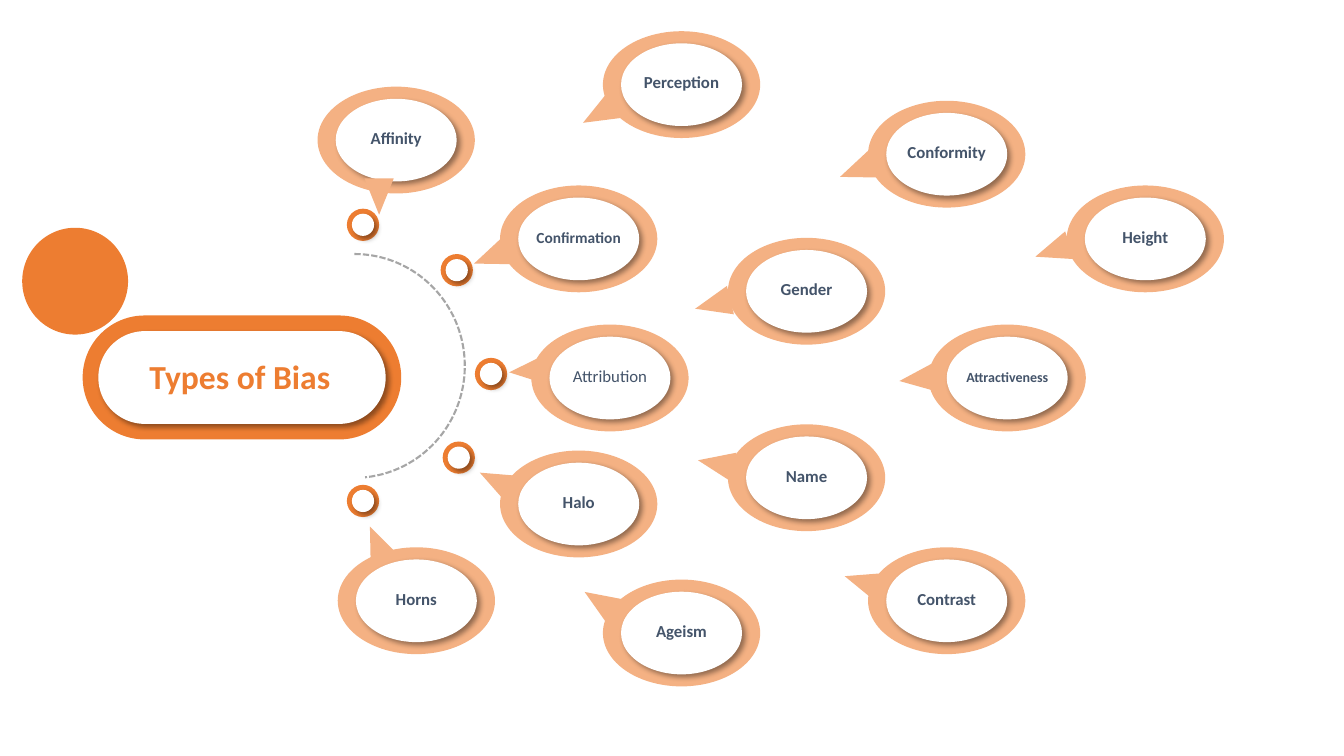
from lxml import etree
from pptx import Presentation, util as u
from pptx.dml import color
from pptx.enum import dml, shapes, text
from pptx.oxml import ns

ORANGE, PEACH, WHITE = "ED7D31", "F4B183", "FFFFFF"
SLATE, GREY = "44546A", "A6A6A6"
FONT = "Calibri"
OVAL = shapes.MSO_SHAPE.OVAL
PILL = shapes.MSO_SHAPE.ROUNDED_RECTANGLE

presentation = Presentation()
presentation.slide_width, presentation.slide_height = u.Inches(13.33), u.Inches(7.5)
CELL = presentation.slide_height / 75  # square grid, 75 rows high

# Balloon size, rim and tail, in grid cells
BALLOON = (15.6, 10.6)
RIM = (1.8, 1.2)
TAIL = (2.9, 3.6)
DOT, DOT_RIM = 3.2, 0.5

# label, column, row, tail centre from the balloon corner, tail turn
# (a turn of 0 points down, 90 points left)
BALLOONS = [
    ("Name", 72.2, 42.1, -1.2, 3.9, 100.8),
    ("Gender", 72.2, 23.6, -1.5, 6.6, 76.3),
    ("Perception", 59.8, 3.1, -0.4, 8.2, 60.8),
    ("Conformity", 86.1, 10, -1.1, 6.9, 69),
    ("Ageism", 59.8, 57.5, -0.3, 2.2, 122.9),
    ("Height", 105.8, 18.4, -1.4, 6.5, 71.6),
    ("Contrast", 86.1, 54.3, -0.6, 3.4, 107.5),
    ("Attractiveness", 92.1, 32.2, -1.1, 5.4, 83.7),
    ("Halo", 49.6, 44.7, -0.4, 3, 116.7),
    ("Affinity", 31.5, 8.6, 6.1, 10.9, 0),
    ("Confirmation", 49.6, 18.4, -0.9, 7.1, 69),
    ("Horns", 33.5, 54.3, 3.9, -0.4, 156.9),
    ("Attribution", 52.7, 32.2, -0.4, 4.6, 85.7),
]
LABEL_SIZES = {"Attractiveness": 10, "Confirmation": 11}
PLAIN_LABELS = {"Attribution"}
DOTS = [(34.4, 20.7), (43.7, 25.2), (34.4, 48.1), (43.9, 43.8), (47.1, 35.5)]


def rgb(value):
    return color.RGBColor.from_string(value)


def cells(*counts):
    return [round(count * CELL) for count in counts]


def inset(box, across, down):
    left, top, width, height = box
    return left + across, top + down, width - 2 * across, height - 2 * down


def add_filled(parent, kind, box, fill):
    shape = parent.shapes.add_shape(kind, *cells(*box))
    shape.fill.solid()
    shape.fill.fore_color.rgb = rgb(fill)
    shape.line.fill.background()
    shape.shadow.inherit = False
    return shape


def add_raised(parent, kind, box):
    """White shape with a soft shadow to the lower right."""
    shape = add_filled(parent, kind, box, WHITE)
    effects = shape._element.spPr.find(ns.qn("a:effectLst"))
    shadow = etree.SubElement(effects, ns.qn("a:outerShdw"), blurRad=str(u.Pt(4)),
                              dist=str(u.Pt(3)), dir="2700000", algn="tl",
                              rotWithShape="0")
    black = etree.SubElement(shadow, ns.qn("a:srgbClr"), val="000000")
    etree.SubElement(black, ns.qn("a:alpha"), val="40000")
    return shape


def write(shape, words, size, ink, bold):
    shape.text_frame.text = words
    paragraph = shape.text_frame.paragraphs[0]
    paragraph.alignment = text.PP_ALIGN.CENTER
    font = paragraph.runs[0].font
    font.name, font.size, font.bold = FONT, u.Pt(size), bold
    font.color.rgb = rgb(ink)
    return paragraph


def add_arc(slide, box):
    arc = slide.shapes.add_shape(shapes.MSO_SHAPE.ARC, *cells(*box))
    arc.adjustments[0], arc.adjustments[1] = 162, 50.7
    arc.fill.background()
    arc.line.color.rgb = rgb(GREY)
    arc.line.width = u.Pt(1.5)
    arc.line.dash_style = dml.MSO_LINE.SQUARE_DOT
    arc.shadow.inherit = False


def add_title(slide, box):
    left, top, width, height = box
    group = slide.shapes.add_group_shape()
    for pill in (add_filled(group, PILL, box, ORANGE),
                 add_raised(group, PILL, inset(box, 1.55, 1.55))):
        pill.adjustments[0] = 0.5
    title = slide.shapes.add_textbox(*cells(left + 2.1, top + 3.5, width - 4.6, 5))
    title.text_frame.word_wrap = True
    title.text_frame.auto_size = text.MSO_AUTO_SIZE.SHAPE_TO_FIT_TEXT
    write(title, "Types of Bias", 24, ORANGE, True)
    # Ball resting on the upper left corner of the pill
    add_filled(slide, OVAL, (left - 6, top - 8.7, 10.5, 10.6), ORANGE)


def add_dot(slide, left, top):
    group = slide.shapes.add_group_shape()
    box = (left, top, DOT, DOT)
    add_filled(group, OVAL, box, ORANGE)
    add_raised(group, OVAL, inset(box, DOT_RIM, DOT_RIM))


def add_balloon(slide, label, left, top, tail_across, tail_down, turn):
    group = slide.shapes.add_group_shape()
    box = (left, top, *BALLOON)
    add_filled(group, OVAL, box, PEACH)
    face = add_raised(group, OVAL, inset(box, *RIM))
    frame = face.text_frame
    frame.word_wrap = True
    frame.vertical_anchor = text.MSO_ANCHOR.MIDDLE
    frame.margin_left = frame.margin_right = frame.margin_top = frame.margin_bottom = 0
    paragraph = write(face, label, LABEL_SIZES.get(label, 12), SLATE,
                      label not in PLAIN_LABELS)
    paragraph.line_spacing = u.Pt(11)
    width, height = TAIL
    tail = add_filled(group, shapes.MSO_SHAPE.ISOSCELES_TRIANGLE,
                      (left + tail_across - width / 2, top + tail_down - height / 2,
                       width, height), PEACH)
    tail.rotation = 180 + turn


def main():
    slide = presentation.slides.add_slide(presentation.slide_layouts[6])
    add_arc(slide, (24.2, 25.2, 21.9, 22.2))
    add_title(slide, (8.2, 31.3, 31.6, 12.3))
    for dot in DOTS:
        add_dot(slide, *dot)
    for balloon in BALLOONS:
        add_balloon(slide, *balloon)
    presentation.save("out.pptx")


if __name__ == "__main__":
    main()
